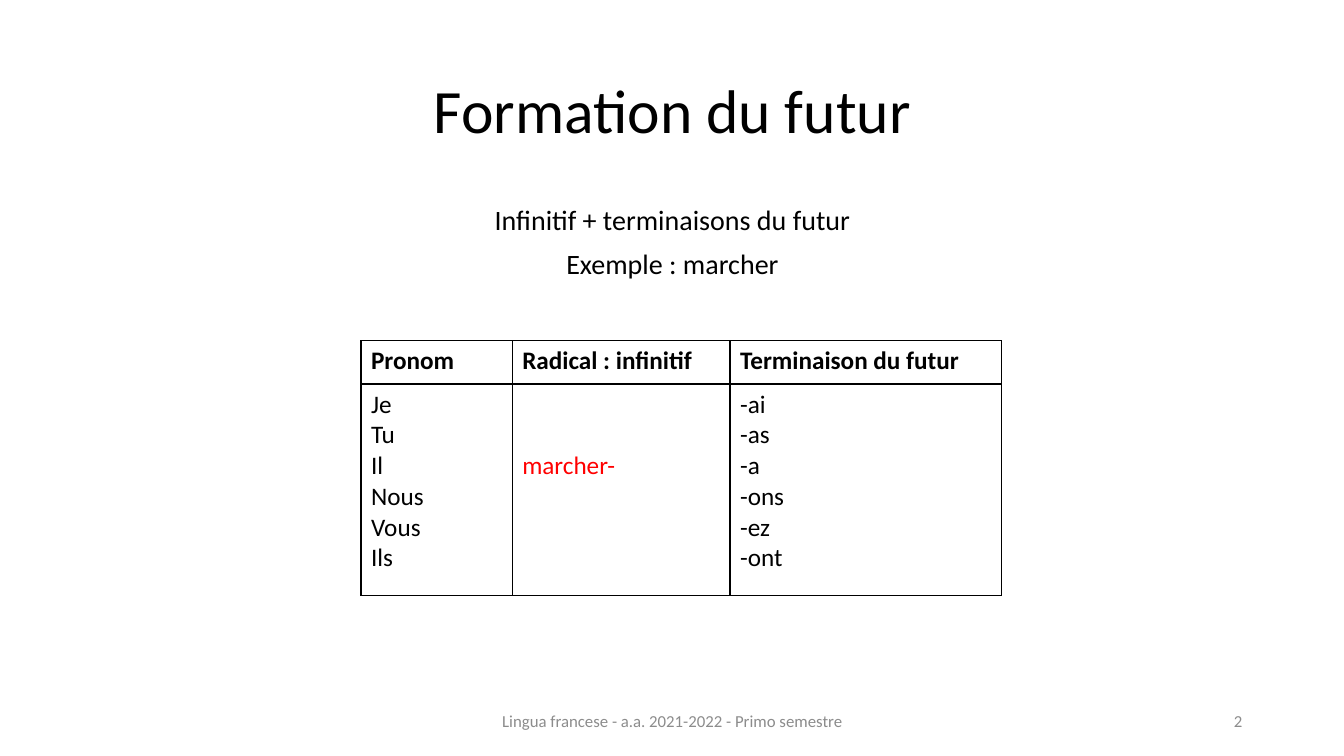
from collections import namedtuple
from dataclasses import dataclass

from lxml import etree
from pptx import Presentation
from pptx import util as u
from pptx.dml.color import RGBColor
from pptx.enum import text
from pptx.oxml.ns import qn

PX = 9144  # 100 px to the inch
Box = namedtuple("Box", "left top width height")


@dataclass(frozen=True)
class Theme:
    font: str = "Calibri"
    ink: str = "000000"
    accent: str = "FF0000"
    muted: str = "8C8C8C"
    paper: str = "FFFFFF"
    title: int = 44
    body: int = 20
    table: int = 18
    footer: int = 12
    border: int = 1


THEME = Theme()
ALIGN = text.PP_ALIGN
ANCHOR = text.MSO_ANCHOR


def emu(box):
    return [length * PX for length in box]


def write(frame, words, size, color=THEME.ink, align=ALIGN.LEFT, bold=False,
          line=1.0, gap=0):
    """Fill a text frame, one paragraph a line, and format its runs."""
    frame.word_wrap = True
    frame.text = words
    for index, para in enumerate(frame.paragraphs):
        para.alignment = align
        para.line_spacing = line
        para.space_before = u.Pt(gap if index else 0)
        for span in para.runs:
            span.font.name = THEME.font
            span.font.size = u.Pt(size)
            span.font.bold = bold
            span.font.color.rgb = RGBColor.from_string(color)


def add_label(page, box, words, size, anchor=ANCHOR.TOP, **style):
    frame = page.shapes.add_textbox(*emu(box)).text_frame
    frame.vertical_anchor = anchor
    write(frame, words, size, **style)


def add_title(page, box, words):
    title = page.shapes.title
    title.left, title.top, title.width, title.height = emu(box)
    title.text_frame.vertical_anchor = ANCHOR.MIDDLE
    write(title.text_frame, words, THEME.title, align=ALIGN.CENTER, line=0.9)


def add_borders(cell):
    properties = cell._tc.get_or_add_tcPr()
    for side in ("a:lnL", "a:lnR", "a:lnT", "a:lnB"):
        edge = etree.SubElement(properties, qn(side),
                                w=str(u.Pt(THEME.border)))
        fill = etree.SubElement(edge, qn("a:solidFill"))
        etree.SubElement(fill, qn("a:srgbClr"), val=THEME.ink)


def add_endings_table(page, box, widths, heights, rows):
    table = page.shapes.add_table(len(rows), len(widths), *emu(box)).table
    table.first_row = table.horz_banding = False
    for column, width in zip(table.columns, widths):
        column.width = width * PX
    for row, height in zip(table.rows, heights):
        row.height = height * PX
    for r, row in enumerate(rows):
        for c, words in enumerate(row):
            cell = table.cell(r, c)
            add_borders(cell)
            cell.fill.solid()
            cell.fill.fore_color.rgb = RGBColor.from_string(THEME.paper)
            is_stem = r == 1 and c == 1
            write(cell.text_frame, words, THEME.table, bold=r == 0,
                  color=THEME.accent if is_stem else THEME.ink)
            if is_stem:  # level with the third pronoun
                cell.margin_top = 66 * PX


def add_footer(page, box, words, number):
    """Centre the note in the box and put the number at its right end."""
    style = dict(size=THEME.footer, color=THEME.muted, anchor=ANCHOR.MIDDLE)
    note, counter = 450, 300
    note_left = box.left + (box.width - note) // 2
    counter_left = box.left + box.width - counter
    add_label(page, box._replace(left=note_left, width=note), words,
              align=ALIGN.CENTER, **style)
    add_label(page, box._replace(left=counter_left, width=counter), number,
              align=ALIGN.RIGHT, **style)


def main():
    deck = Presentation()
    deck.slide_width, deck.slide_height = 1333 * PX, 750 * PX
    page = deck.slides.add_slide(deck.slide_layouts[5])

    # Heading and rule
    add_title(page, Box(92, 40, 1150, 145), "Formation du futur")
    add_label(page, Box(92, 200, 1150, 476),
              "Infinitif + terminaisons du futur\nExemple : marcher",
              THEME.body, align=ALIGN.CENTER, line=0.9, gap=10)

    # Endings
    add_endings_table(
        page, Box(358, 338, 635, 253), (150, 216, 269), (43, 210),
        [("Pronom", "Radical : infinitif", "Terminaison du futur"),
         ("Je\nTu\nIl\nNous\nVous\nIls", "marcher-",
          "-ai\n-as\n-a\n-ons\n-ez\n-ont")])

    # Footer
    add_footer(page, Box(92, 695, 1150, 40),
               "Lingua francese - a.a. 2021-2022 - Primo semestre", "2")
    deck.save("out.pptx")


if __name__ == "__main__":
    main()
